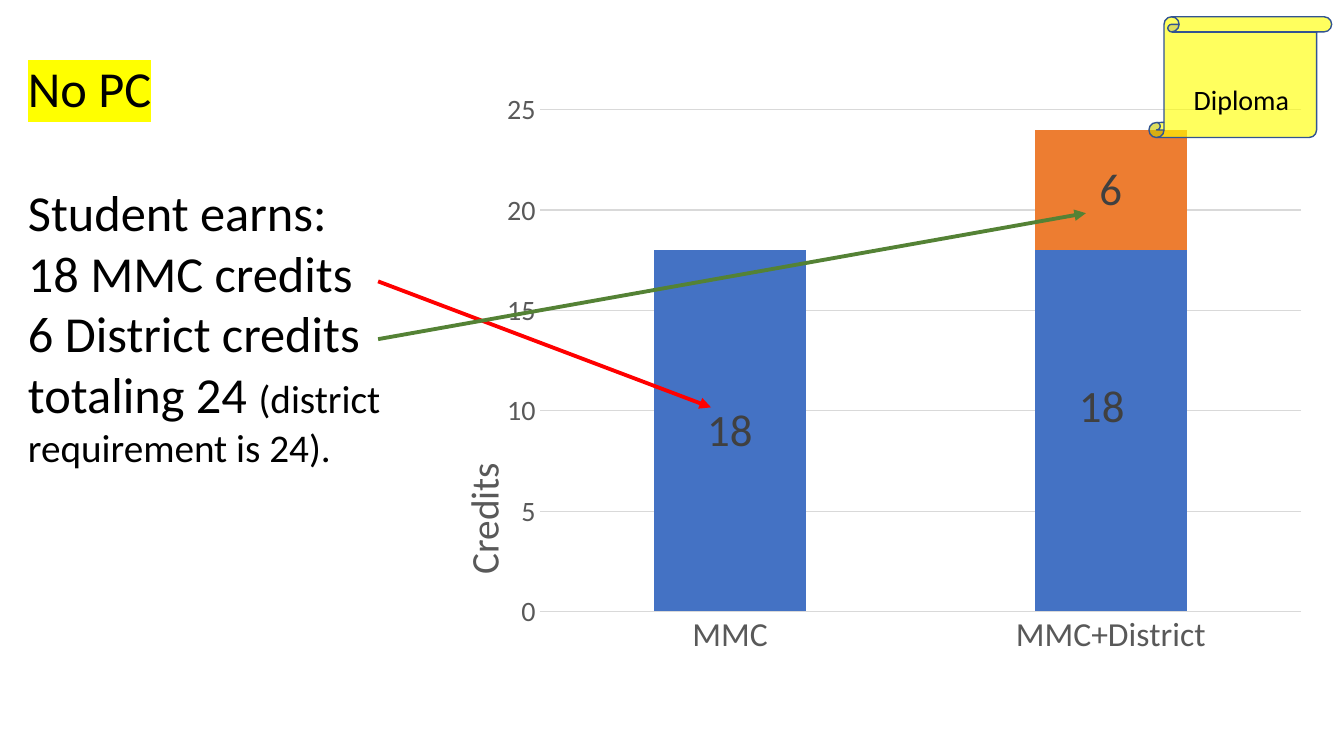
import pptx
import pptx.chart.data
import pptx.dml.color
import pptx.enum.chart
import pptx.enum.shapes
import pptx.enum.text
import pptx.oxml
import pptx.oxml.ns
import pptx.util

RGB = pptx.dml.color.RGBColor
BLACK = RGB(0x00, 0x00, 0x00)
GREY = RGB(0x59, 0x59, 0x59)
DARK_GREY = RGB(0x40, 0x40, 0x40)
GRID_GREY = RGB(0xD9, 0xD9, 0xD9)
YELLOW = RGB(0xFF, 0xFF, 0x00)
NAVY = RGB(0x32, 0x54, 0x91)
BLUE = RGB(0x44, 0x72, 0xC4)
ORANGE = RGB(0xED, 0x7D, 0x31)
RED = RGB(0xFF, 0x00, 0x00)
GREEN = RGB(0x54, 0x82, 0x35)


def element(tag, **attributes):
    """Make an empty XML element such as a:tailEnd."""
    node = pptx.oxml.parse_xml(f"<{tag} {pptx.oxml.ns.nsdecls(tag[0])}/>")
    for name, value in attributes.items():
        node.set(name, str(value))
    return node


def set_layout(parent, **fractions):
    """Give a chart part a manual layout, in fractions of the chart."""
    for old in parent.xpath("c:layout"):
        parent.remove(old)
    layout, manual = element("c:layout"), element("c:manualLayout")
    layout.append(manual)
    for name, value in fractions.items():
        manual.append(element(f"c:{name}", val=value))
    leading = parent.xpath("c:tx | c:idx")
    if leading:
        leading[0].addnext(layout)
    else:
        parent.insert(0, layout)


class Page:
    FONT = "Calibri"
    PX = 9525  # 96 px to the inch

    def __init__(self, deck):
        self.slide = deck.slides.add_slide(deck.slide_layouts[1])

    def px(self, *lengths):
        return [pptx.util.Emu(length * self.PX) for length in lengths]

    def style(self, font, size, color=BLACK):
        font.name, font.size, font.bold = self.FONT, pptx.util.Pt(size), False
        font.color.rgb = color

    def fill_text(self, shape, box, lines, size, align):
        shape.left, shape.top, shape.width, shape.height = self.px(*box)
        frame = shape.text_frame
        frame.text = "\n".join(lines)
        frame.word_wrap = True
        frame.auto_size = pptx.enum.text.MSO_AUTO_SIZE.NONE
        frame.vertical_anchor = pptx.enum.text.MSO_ANCHOR.TOP
        for para in frame.paragraphs:
            para.alignment = align
            para.line_spacing = 1.0
            para.space_before = pptx.util.Pt(0)
            self.style(para.runs[0].font, size)
        return frame

    def title(self, text, box, size, highlight):
        frame = self.fill_text(self.slide.shapes.title, box, [text], size,
                               pptx.enum.text.PP_ALIGN.LEFT)
        marker = element("a:highlight")
        marker.append(element("a:srgbClr", val=highlight))
        span = frame.paragraphs[0].runs[0]
        span._r.rPr.xpath("a:solidFill")[0].addnext(marker)

    def body(self, lines, remark, box, size, remark_size):
        frame = self.fill_text(self.slide.placeholders[1], box, lines, size,
                               pptx.enum.text.PP_ALIGN.LEFT)
        for para in frame.paragraphs:
            properties = para._p.get_or_add_pPr()
            properties.set("marL", "0")
            properties.set("indent", "0")
            properties.append(element("a:buNone"))
        span = frame.paragraphs[-1].add_run()
        span.text = remark
        self.style(span.font, remark_size)

    def label(self, text, box, size):
        self.fill_text(self.slide.shapes.add_textbox(*self.px(*box)), box,
                       [text], size, pptx.enum.text.PP_ALIGN.CENTER)

    def scroll(self, box, fill, opacity, line):
        shape = self.slide.shapes.add_shape(
            pptx.enum.shapes.MSO_SHAPE.VERTICAL_SCROLL, *self.px(*box))
        shape.shadow.inherit = False
        shape.fill.solid()
        shape.fill.fore_color.rgb = fill
        color = shape._element.spPr.xpath("a:solidFill/a:srgbClr")[0]
        color.append(element("a:alpha", val=opacity * 1000))
        shape.line.color.rgb = line
        shape.line.width = pptx.util.Pt(1)

    def arrow(self, start, end, color):
        connector = self.slide.shapes.add_connector(
            pptx.enum.shapes.MSO_CONNECTOR.STRAIGHT, *self.px(*start, *end))
        connector.line.color.rgb = color
        connector.line.width = pptx.util.Pt(2.75)
        connector._element.spPr.xpath("a:ln")[0].append(
            element("a:tailEnd", type="triangle"))
        connector._element.spPr.append(element("a:effectLst"))

    def stacked_columns(self, box, categories, series):
        """Add the chart; series maps a name to its values and colour."""
        data = pptx.chart.data.CategoryChartData()
        data.categories = categories
        for name, (values, _) in series.items():
            data.add_series(name, values)
        chart = self.slide.shapes.add_chart(
            pptx.enum.chart.XL_CHART_TYPE.COLUMN_STACKED,
            *self.px(*box), data).chart
        self.style(chart.font, 10)
        chart.has_title = chart.has_legend = False
        plot = chart.plots[0]
        plot.gap_width, plot.overlap = 150, 100
        plot.vary_by_categories = False
        for column, (_, color) in zip(plot.series, series.values()):
            column.format.fill.solid()
            column.format.fill.fore_color.rgb = color
            labels = column.data_labels
            labels.show_value = True
            labels.number_format = "0;;"  # zero stays unlabelled
            labels.number_format_is_linked = False
            self.style(labels.font, 32, DARK_GREY)
        self.style_axes(chart)
        set_layout(chart._chartSpace.xpath("c:chart/c:plotArea")[0],
                   layoutTarget="inner", xMode="edge", yMode="edge",
                   x=0.13, y=0.05, w=0.85, h=0.84)
        return chart

    def style_axes(self, chart):
        for axis, size in ((chart.category_axis, 24), (chart.value_axis, 20)):
            axis.major_tick_mark = pptx.enum.chart.XL_TICK_MARK.NONE
            axis.minor_tick_mark = pptx.enum.chart.XL_TICK_MARK.NONE
            self.style(axis.tick_labels.font, size, GREY)
        value_axis = chart.value_axis
        value_axis.minimum_scale, value_axis.maximum_scale = 0, 25
        value_axis.major_unit = 5
        value_axis.has_major_gridlines = True
        value_axis.format.line.fill.background()
        for line in (chart.category_axis.format.line,
                     value_axis.major_gridlines.format.line):
            line.color.rgb = GRID_GREY
            line.width = pptx.util.Pt(0.75)

    def axis_title(self, axis, text, size, x, y):
        axis.has_title = True
        title = axis.axis_title
        title.text_frame.text = text
        self.style(title.text_frame.paragraphs[0].runs[0].font, size, GREY)
        frame_properties = title._element.xpath(".//a:bodyPr")[0]
        frame_properties.set("rot", "-5400000")
        frame_properties.set("vert", "horz")
        set_layout(title._element, xMode="edge", yMode="edge", x=x, y=y)

    def nudge_label(self, column, index, x, y):
        self.style(column.points[index].data_label.font, 32, DARK_GREY)
        label = column._element.xpath(f"c:dLbls/c:dLbl[c:idx/@val={index}]")[0]
        set_layout(label, x=x, y=y)


def main():
    deck = pptx.Presentation()
    deck.slide_width, deck.slide_height = (
        pptx.util.Inches(13.33), pptx.util.Inches(7.5))
    page = Page(deck)
    page.title("No PC", (17, 50, 387, 68), 36, YELLOW)
    page.body(["Student earns:", "18 MMC credits",
               "6 District credits totaling 24 "],
              "(district requirement is 24).", (17, 168, 387, 292), 36, 28)
    chart = page.stacked_columns(
        (403, 76, 853, 569), ["MMC", "MMC+District"],
        {"Series 1": ([18, 18], BLUE), "Series 2": ([0, 6], ORANGE)})
    page.axis_title(chart.value_axis, "Credits", 28, 0.03, 0.63)
    page.nudge_label(chart.plots[0].series[0], 1, -0.01, -0.04)
    page.scroll((1094, 16, 174, 115), YELLOW, 63, NAVY)
    page.label("Diploma", (1117, 74, 130, 42), 20)
    page.arrow((360, 268), (677, 388), RED)
    page.arrow((360, 323), (1034, 203), GREEN)
    deck.save("out.pptx")


if __name__ == "__main__":
    main()
